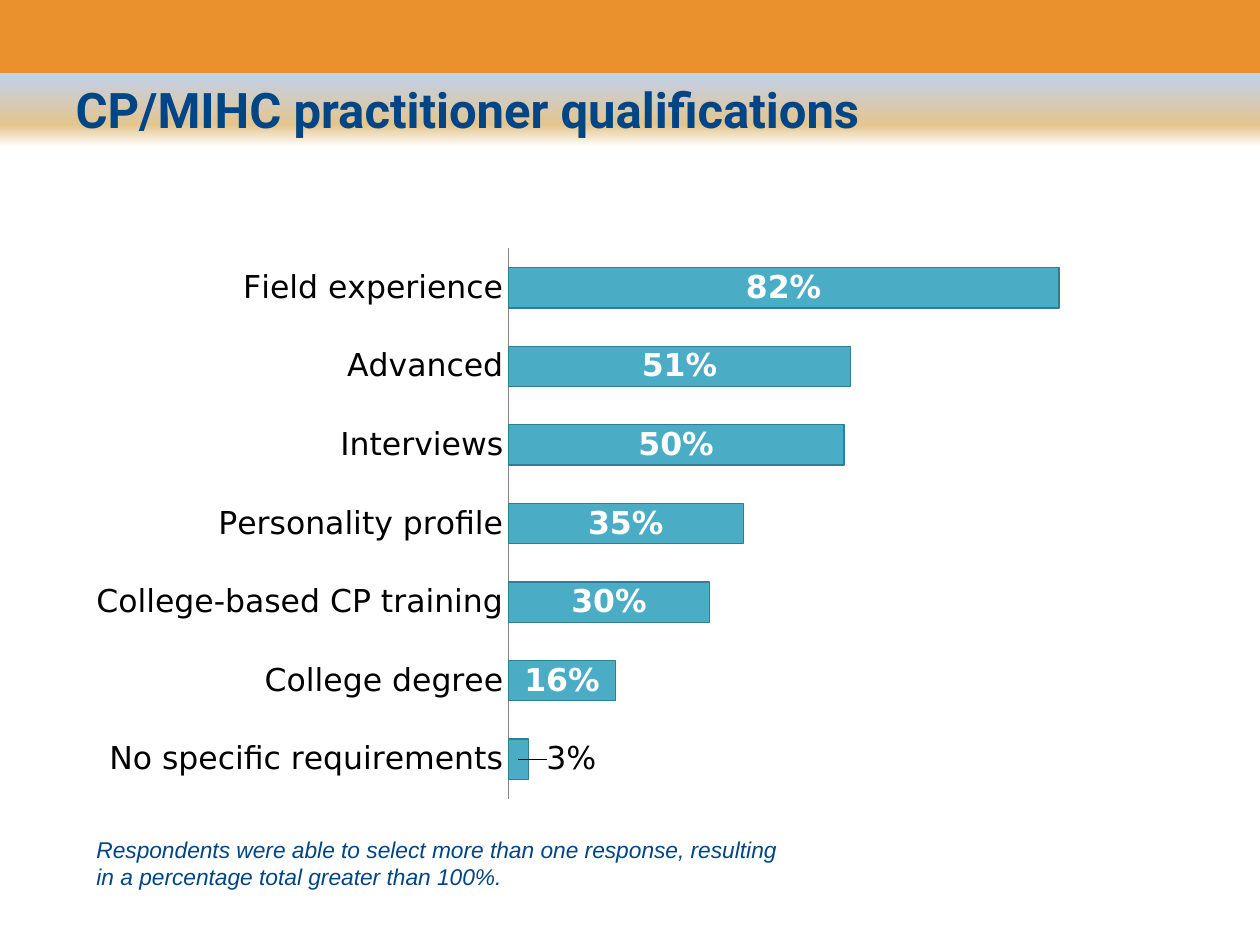
from lxml import etree
from pptx import Presentation
from pptx.chart.data import CategoryChartData
from pptx.dml.color import RGBColor
from pptx.enum import chart as ch, shapes, text
from pptx.oxml import parse_xml
from pptx.oxml.ns import nsdecls, qn
from pptx.util import Pt

C = {"navy": "004586", "orange": "EA902C", "mist": "C2D1ED", "sand": "E4C58D",
     "white": "FFFFFF", "black": "000000", "bar": "4BACC6", "edge": "2E7F93",
     "axis": "868686"}
BAND_STOPS = [(50, "orange"), (50, "mist"), (85, "sand"), (100, "white")]
QUALIFICATIONS = [("No specific requirements", 0.03), ("College degree", 0.16),
                  ("College-based CP training", 0.30), ("Personality profile", 0.35),
                  ("Interviews", 0.50), ("Advanced", 0.51), ("Field experience", 0.82)]


def rgb(name):
    return RGBColor.from_string(C[name])


def style(font, name, size, color, bold=False, italic=False):
    font.name, font.size = name, Pt(size)
    font.bold, font.italic = bold, italic
    font.color.rgb = rgb(color)


def add_layout(parent, index, target=None, **values):
    layout = etree.Element(qn("c:layout"))
    manual = etree.SubElement(layout, qn("c:manualLayout"))
    if target:
        etree.SubElement(manual, qn("c:layoutTarget"), val=target)
        for mode in ("xMode", "yMode"):
            etree.SubElement(manual, qn("c:" + mode), val="edge")
    for key, value in values.items():
        etree.SubElement(manual, qn("c:" + key), val=str(value))
    for old in parent.findall(qn("c:layout")):
        parent.remove(old)
    parent.insert(index, layout)


def add_band(s, x, y, w, h):
    sp = s.shapes.add_shape(shapes.MSO_SHAPE.RECTANGLE, Pt(x), Pt(y), Pt(w), Pt(h))
    sp.shadow.inherit = False
    sp.line.fill.background()
    sp.fill.gradient()
    sp.fill.gradient_angle = 270
    stops = sp._element.spPr.find(qn("a:gradFill")).find(qn("a:gsLst"))
    for stop in list(stops):
        stops.remove(stop)
    for pos, name in BAND_STOPS:
        stops.append(parse_xml(f'<a:gs {nsdecls("a")} pos="{pos * 1000}">'
                               f'<a:srgbClr val="{C[name]}"/></a:gs>'))
    s.shapes._spTree.remove(sp._element)
    s.shapes._spTree.insert(2, sp._element)


def set_title(s, x, y, w, h):
    sp = s.shapes.title
    sp.left, sp.top, sp.width, sp.height = Pt(x), Pt(y), Pt(w), Pt(h)
    tf = sp.text_frame
    tf.text = "CP/MIHC practitioner qualifications"
    tf.vertical_anchor = text.MSO_ANCHOR.TOP
    p = tf.paragraphs[0]
    p.alignment = text.PP_ALIGN.LEFT
    style(p.runs[0].font, "Roboto", 28, "navy", bold=True)


def add_bars(s, x, y, w, h):
    data = CategoryChartData(number_format="0%")
    data.categories = [name for name, _ in QUALIFICATIONS]
    data.add_series("Series 1", [value for _, value in QUALIFICATIONS])
    chart = s.shapes.add_chart(ch.XL_CHART_TYPE.BAR_STACKED,
                               Pt(x), Pt(y), Pt(w), Pt(h), data).chart
    chart.has_legend = chart.has_title = False
    style(chart.font, "Calibri", 18, "black")

    cat = chart.category_axis
    cat.major_tick_mark = ch.XL_TICK_MARK.NONE
    cat.format.line.color.rgb = rgb("axis")
    style(cat.tick_labels.font, "DejaVu Sans", 18, "black")
    val = chart.value_axis
    val.minimum_scale, val.maximum_scale = 0, 0.9
    val.has_major_gridlines = val.visible = False

    plot = chart.plots[0]
    plot.gap_width, plot.overlap, plot.vary_by_categories = 95, 100, False
    series = plot.series[0]
    series.format.fill.solid()
    series.format.fill.fore_color.rgb = rgb("bar")
    series.format.line.color.rgb = rgb("edge")
    series.format.line.width = Pt(0.75)

    labels = series.data_labels
    labels.show_value = True
    labels.number_format, labels.number_format_is_linked = "0%", False
    labels.position = ch.XL_LABEL_POSITION.CENTER
    style(labels.font, "DejaVu Sans", 18, "white", bold=True)
    small = series.points[0].data_label
    style(small.font, "DejaVu Sans", 18, "black")
    small.position = ch.XL_LABEL_POSITION.CENTER
    add_layout(labels._element.find(qn("c:dLbl")), 1, x=0.05, y=0)

    area = chart._chartSpace.chart.plotArea
    add_layout(area, 0, "inner", x=0.41, y=0.02, w=0.57, h=0.96)


def add_footnote(s, x, y, w, h):
    tf = s.shapes.add_textbox(Pt(x), Pt(y), Pt(w), Pt(h)).text_frame
    tf.word_wrap = True
    tf.auto_size = text.MSO_AUTO_SIZE.SHAPE_TO_FIT_TEXT
    tf.text = ("Respondents were able to select more than one response, "
               "resulting in a percentage total greater than 100%.")
    style(tf.paragraphs[0].runs[0].font, "Arial", 13, "navy", italic=True)


def main():
    prs = Presentation()
    prs.slide_width, prs.slide_height = Pt(720), Pt(540)
    s = prs.slides.add_slide(prs.slide_layouts[5])
    add_band(s, 0, 0, 720, 84)
    set_title(s, 36, 42, 648, 90)
    add_bars(s, 42, 135.5, 606, 327.5)
    add_footnote(s, 48, 474, 414, 39)
    prs.save("out.pptx")


if __name__ == "__main__":
    main()
